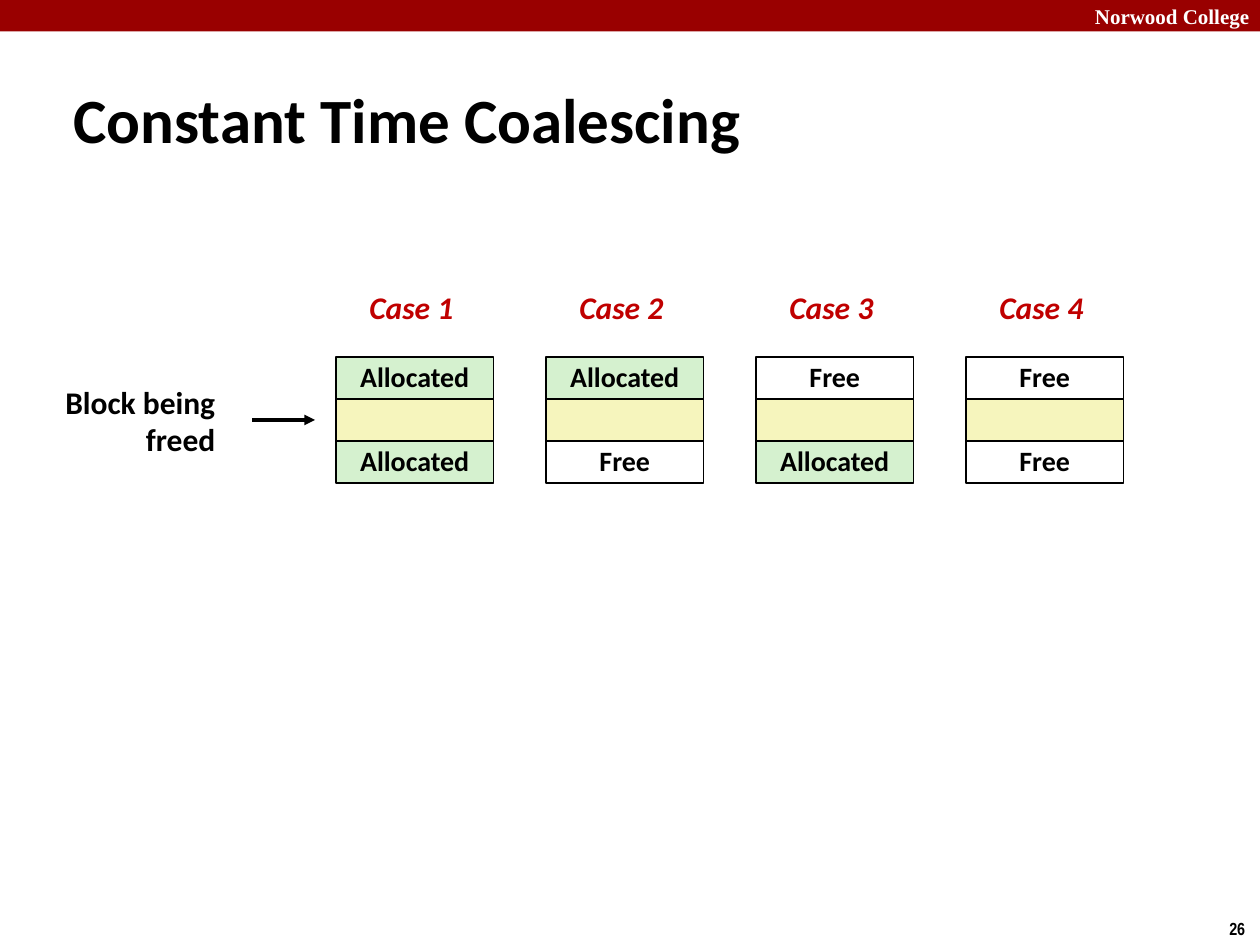
from lxml import etree
from pptx import Presentation
from pptx import util as u
from pptx.dml.color import RGBColor
from pptx.enum import shapes, text
from pptx.oxml import ns

PX = 7620  # EMU; 120 px to the inch
BLACK = RGBColor(0x00, 0x00, 0x00)
WHITE = RGBColor(0xFF, 0xFF, 0xFF)
BANNER_RED = RGBColor(0x99, 0x00, 0x00)
CASE_RED = RGBColor(0xC0, 0x00, 0x00)
ALLOCATED_GREEN = RGBColor(0xD5, 0xF1, 0xCF)
FREED_YELLOW = RGBColor(0xF6, 0xF5, 0xBD)
ALIGN = text.PP_ALIGN
MIDDLE = text.MSO_ANCHOR.MIDDLE


def px(*lengths):
    return [u.Emu(n * PX) for n in lengths]


def write(shape, words, size=18, font="Calibri", color=BLACK, italic=False,
          align=ALIGN.LEFT, anchor=text.MSO_ANCHOR.TOP, spacing=None, wrap=False):
    """Fill the shape's text frame, one paragraph per line of words."""
    frame = shape.text_frame
    frame.text = words
    frame.auto_size = text.MSO_AUTO_SIZE.NONE
    frame.word_wrap = wrap
    frame.vertical_anchor = anchor
    for paragraph in frame.paragraphs:
        paragraph.alignment = align
        paragraph.line_spacing = spacing
        paragraph.font.size = u.Pt(size)
        paragraph.font.name = font
        paragraph.font.bold = True
        paragraph.font.italic = italic
        paragraph.font.color.rgb = color


prs = Presentation()
prs.slide_width, prs.slide_height = px(1200, 900)
slide = prs.slides.add_slide(prs.slide_layouts[5])
parts = slide.shapes

# Banner and page number
banner = parts.add_shape(shapes.MSO_SHAPE.RECTANGLE, *px(0, 0, 1200, 30))
banner.shadow.inherit = False
banner.fill.solid()
banner.fill.fore_color.rgb = BANNER_RED
banner.line.fill.background()
school = parts.add_textbox(*px(1000, 0, 200, 30))
school.text_frame.margin_right = u.Emu(10 * PX)
write(school, "Norwood College", size=12, font="Times New Roman", color=WHITE,
      align=ALIGN.RIGHT, anchor=MIDDLE, wrap=True)
page_number = parts.add_textbox(*px(1159, 868, 41, 32))
write(page_number, "26", size=10, font="Arial Narrow")

# Title
title = parts.title
title.left, title.top, title.width, title.height = px(58, 75, 922, 76)
write(title, "Constant Time Coalescing", size=36, anchor=MIDDLE, wrap=True)

# Cases: the block before, the block being freed, the block after
CASES = [
    ("Allocated", "Allocated"),
    ("Allocated", "Free"),
    ("Free", "Allocated"),
    ("Free", "Free"),
]
FILLS = {"Allocated": ALLOCATED_GREEN, "Free": WHITE, "": FREED_YELLOW}
LEFT, TOP, PITCH, BLOCK_W, BLOCK_H = 320, 340, 200, 150, 40

for column, (before, after) in enumerate(CASES):
    x = LEFT + column * PITCH
    heading = parts.add_textbox(*px(x + 20, 270, 104, 48))
    write(heading, f"Case {column + 1}", color=CASE_RED, italic=True, spacing=0.98)
    for row, state in enumerate((before, "", after)):
        block = parts.add_shape(shapes.MSO_SHAPE.RECTANGLE,
                                *px(x, TOP + row * BLOCK_H, BLOCK_W, BLOCK_H))
        block.shadow.inherit = False
        block.fill.solid()
        block.fill.fore_color.rgb = FILLS[state]
        block.line.color.rgb = BLACK
        block.line.width = u.Pt(1)
        if state:
            write(block, state, size=16, align=ALIGN.CENTER, anchor=MIDDLE, spacing=0.98)

# Pointer to the block being freed
freed_label = parts.add_textbox(*px(49, 361, 168, 84))
write(freed_label, "Block being\nfreed", align=ALIGN.RIGHT, spacing=0.98)
arrow = parts.add_connector(shapes.MSO_CONNECTOR.STRAIGHT, *px(240, 400, 300, 400))
arrow.line.color.rgb = BLACK
arrow.line.width = u.Pt(2)
etree.SubElement(arrow.line._get_or_add_ln(), ns.qn("a:tailEnd"), type="triangle")
etree.SubElement(arrow._element.spPr, ns.qn("a:effectLst"))

prs.save("out.pptx")
